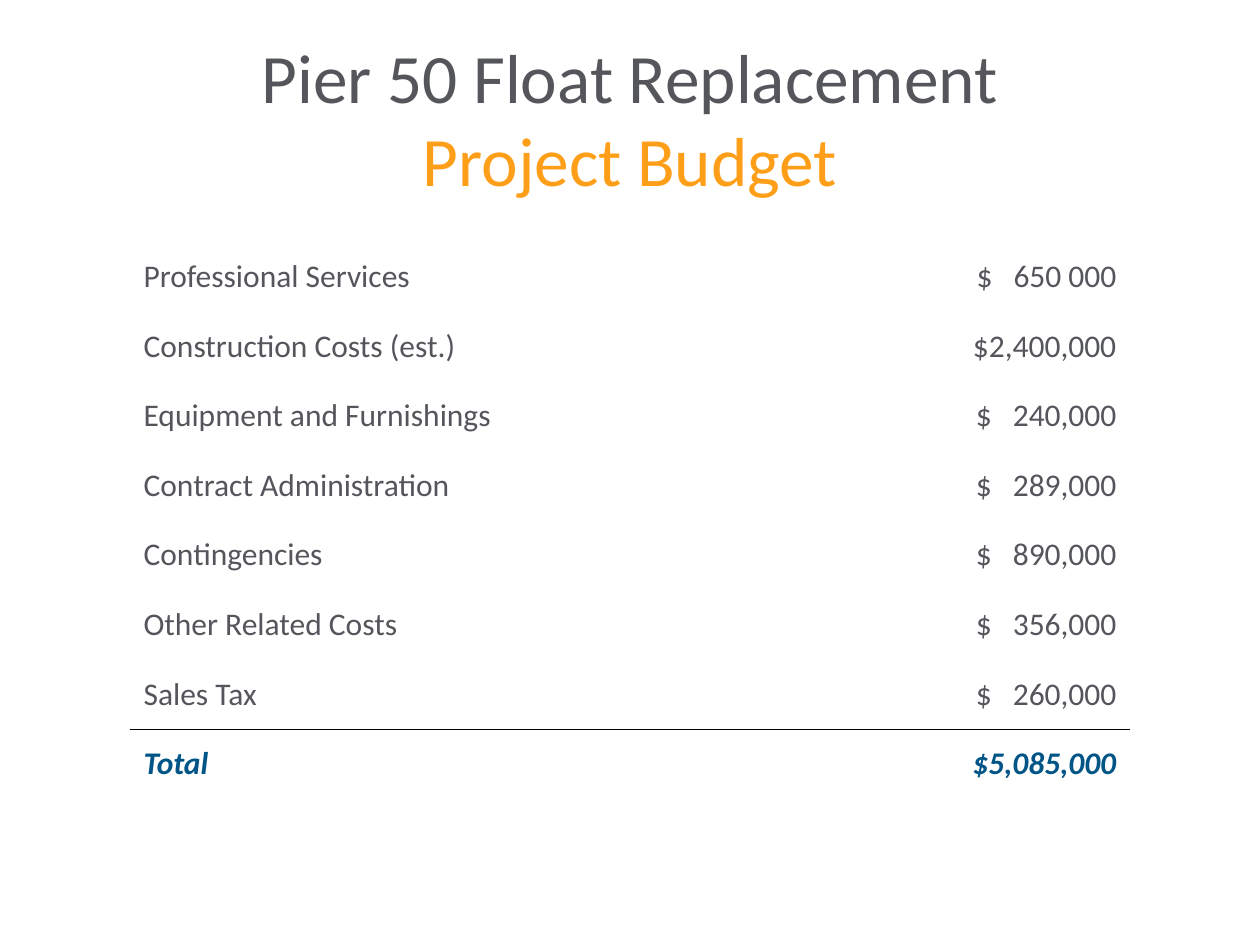
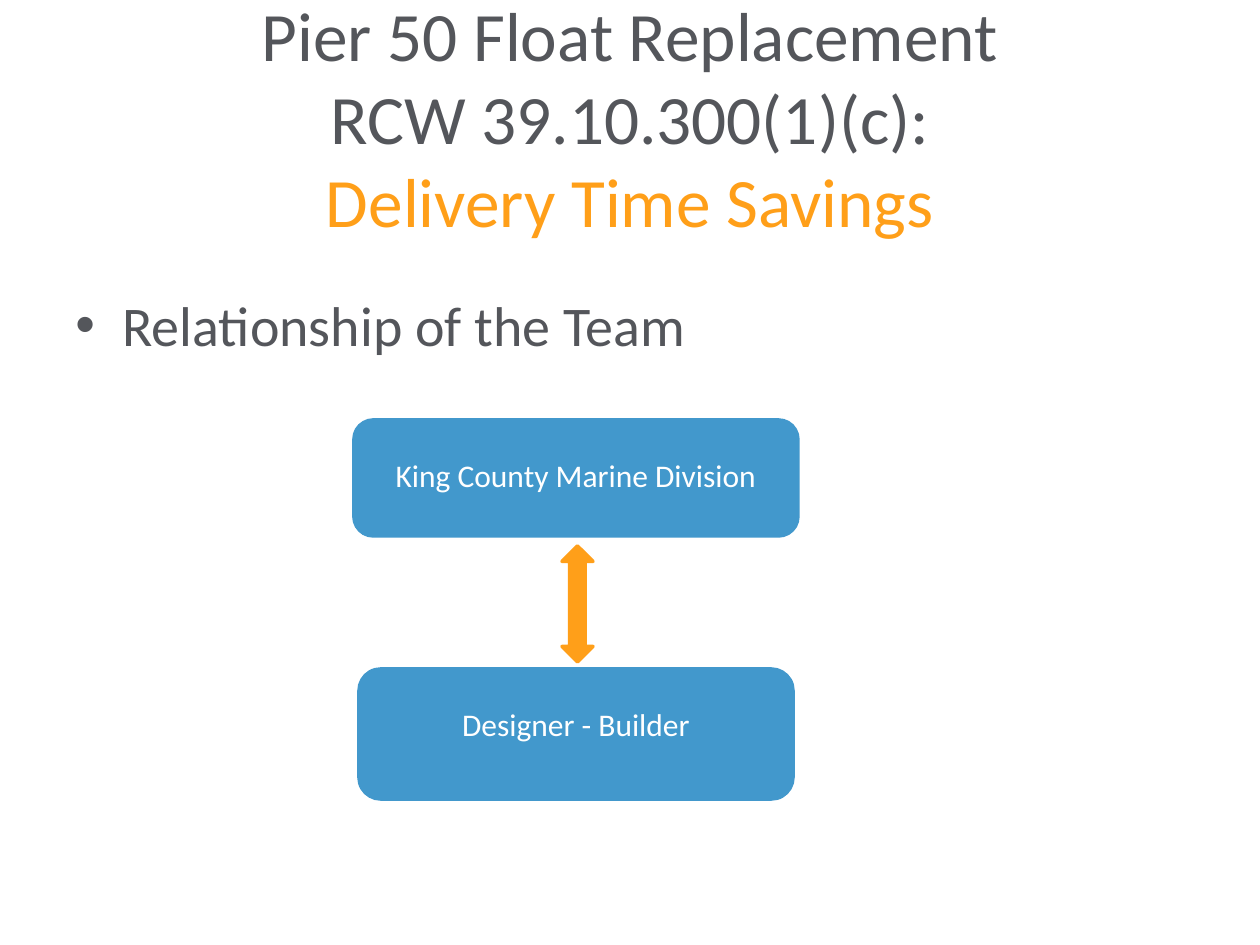
from dataclasses import dataclass

from lxml.etree import SubElement
from pptx import Presentation
from pptx.dml.color import RGBColor
from pptx.enum.shapes import MSO_SHAPE as Shape
from pptx.enum.text import MSO_ANCHOR as Anchor, PP_ALIGN as Align
from pptx.oxml.ns import qn
from pptx.util import Emu, Pt

FONT = "Calibri"
GREY, ORANGE, NAVY, BLUE = "54565B", "FF9F19", "005587", "4298CC"
WHITE, BLACK = "FFFFFF", "000000"
PX_PER_INCH = 126
PROJECT = "Pier 50 Float Replacement"


@dataclass(frozen=True)
class Box:
    x: int
    y: int
    w: int
    h: int

    def emu(self) -> tuple:
        return px(self.x), px(self.y), px(self.w), px(self.h)


@dataclass(frozen=True)
class BudgetLine:
    item: str
    amount: str


@dataclass(frozen=True)
class TeamMember:
    name: str
    box: Box


TITLE_BOX = Box(63, 38, 1134, 158)
BUDGET_BOX = Box(131, 242, 998, 557)
BULLET_BOX = Box(63, 284, 1029, 105)
BULLET_INDENT = 47
AMOUNT_TAB = 37
LABEL_DROP = 30

# A tab separates the dollar sign from amounts below a million.
BUDGET = [
    BudgetLine("Professional Services", "$\t650 000"),
    BudgetLine("Construction Costs (est.)", "$2,400,000"),
    BudgetLine("Equipment and Furnishings", "$\t240,000"),
    BudgetLine("Contract Administration", "$\t289,000"),
    BudgetLine("Contingencies", "$\t890,000"),
    BudgetLine("Other Related Costs", "$\t356,000"),
    BudgetLine("Sales Tax", "$\t260,000"),
    BudgetLine("Total", "$5,085,000"),
]
TEAM = [
    TeamMember("Designer - Builder", Box(359, 669, 434, 130)),
    TeamMember("King County Marine Division", Box(354, 420, 444, 116)),
]
TEAM_ARROW = Box(562, 546, 31, 116)


def px(n: int) -> Emu:
    return Emu(round(n * 914400 / PX_PER_INCH))


def rgb(value: str) -> RGBColor:
    return RGBColor.from_string(value)


def format_runs(p, size: float, color: str, strong: bool = False) -> None:
    for r in p.runs:
        f = r.font
        f.name, f.size, f.color.rgb = FONT, Pt(size), rgb(color)
        if strong:
            f.bold = f.italic = True


def add_slide(prs, *title_lines: str):
    """Add a blank slide whose last title line is the orange topic."""
    s = prs.slides.add_slide(prs.slide_layouts[6])
    tf = s.shapes.add_textbox(*TITLE_BOX.emu()).text_frame
    tf.word_wrap = True
    tf.vertical_anchor = Anchor.MIDDLE
    p = tf.paragraphs[0]
    p.text = "\v".join(title_lines)
    p.alignment = Align.CENTER
    format_runs(p, 39.6, GREY)
    p.runs[-1].font.color.rgb = rgb(ORANGE)
    return s


def add_border(cell, side: str) -> None:
    """Rule one side of a cell; it must be called before the fill is set."""
    ln = SubElement(cell._tc.get_or_add_tcPr(), qn(f"a:{side}"), w=str(Pt(0.5)))
    fill = SubElement(ln, qn("a:solidFill"))
    SubElement(fill, qn("a:srgbClr"), val=BLACK)


def add_amount_tab(p) -> None:
    tabs = SubElement(p._p.get_or_add_pPr(), qn("a:tabLst"))
    SubElement(tabs, qn("a:tab"), pos=str(px(AMOUNT_TAB)), algn="l")


def add_budget_table(s) -> None:
    table = s.shapes.add_table(len(BUDGET), 2, *BUDGET_BOX.emu()).table
    table.first_row = table.horz_banding = False
    total = len(BUDGET) - 1
    borders = {total - 1: "lnB", total: "lnT"}
    for row, line in enumerate(BUDGET):
        columns = ((line.item, Align.LEFT), (line.amount, Align.RIGHT))
        for col, (text, align) in enumerate(columns):
            cell = table.cell(row, col)
            if row in borders:
                add_border(cell, borders[row])
            cell.fill.background()
            cell.vertical_anchor = Anchor.MIDDLE
            p = cell.text_frame.paragraphs[0]
            p.text = text
            p.alignment = align
            if "\t" in text:
                add_amount_tab(p)
            format_runs(p, 18, NAVY if row == total else GREY, row == total)


def add_bullet(s, text: str) -> None:
    tf = s.shapes.add_textbox(*BULLET_BOX.emu()).text_frame
    tf.word_wrap = True
    p = tf.paragraphs[0]
    p.text = text
    p.space_after = Pt(6)
    format_runs(p, 32, GREY)
    pPr = p._p.get_or_add_pPr()
    indent = px(BULLET_INDENT)
    pPr.set("marL", str(indent))
    pPr.set("indent", str(-indent))
    SubElement(pPr, qn("a:buFont"), typeface="Arial")
    SubElement(pPr, qn("a:buChar"), char="•")


def add_solid(s, kind: Shape, box: Box, color: str):
    """Add a preset shape with fill and line of one colour."""
    sp = s.shapes.add_shape(kind, *box.emu())
    sp.shadow.inherit = False
    sp.fill.solid()
    sp.fill.fore_color.rgb = sp.line.color.rgb = rgb(color)
    sp.line.width = Pt(2)
    return sp


def add_member(s, member: TeamMember) -> None:
    tf = add_solid(s, Shape.ROUNDED_RECTANGLE, member.box, BLUE).text_frame
    tf.word_wrap = True
    tf.vertical_anchor = Anchor.TOP
    tf.margin_top = px(LABEL_DROP)
    p = tf.paragraphs[0]
    p.text = member.name
    p.alignment = Align.CENTER
    format_runs(p, 18, WHITE)


def main() -> None:
    prs = Presentation()
    prs.slide_width, prs.slide_height = px(1260), px(945)

    add_budget_table(add_slide(prs, PROJECT, "Project Budget"))

    s = add_slide(prs, PROJECT, "RCW 39.10.300(1)(c):", "Delivery Time Savings")
    add_bullet(s, "Relationship of the Team")
    for member in TEAM:
        add_member(s, member)
    add_solid(s, Shape.UP_DOWN_ARROW, TEAM_ARROW, ORANGE)

    prs.save("out.pptx")


if __name__ == "__main__":
    main()
